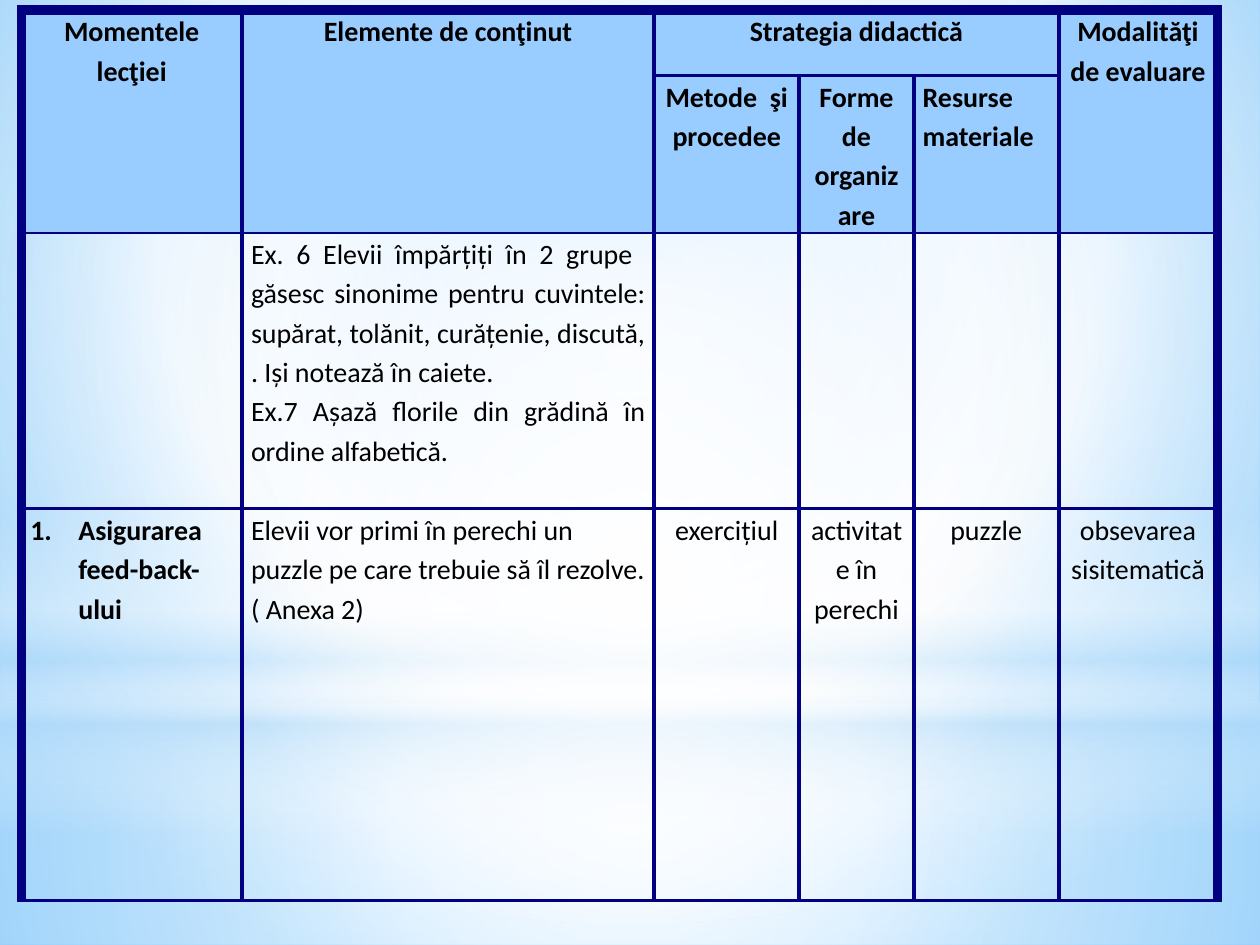
import pptx
import pptx.dml.color
import pptx.enum.shapes
import pptx.enum.text
import pptx.oxml
import pptx.oxml.ns
import pptx.util

Cm = pptx.util.Cm
Pt = pptx.util.Pt
RGBColor = pptx.dml.color.RGBColor
SHAPES = pptx.enum.shapes.MSO_SHAPE
ALIGN = pptx.enum.text.PP_ALIGN
qn = pptx.oxml.ns.qn
NAMESPACE = pptx.oxml.ns.nsdecls("a")

WHITE = RGBColor(0xFF, 0xFF, 0xFF)
BLACK = RGBColor(0, 0, 0)
NAVY = RGBColor(0, 0, 0x80)
HEADER_BLUE = RGBColor(0x99, 0xCC, 0xFF)
MIST = RGBColor(0xB4, 0xDC, 0xFA)
SKY = RGBColor(0x9E, 0xD5, 0xFF)
DEEP_SKY = RGBColor(0x5B, 0xB9, 0xFF)

LINEAR = '<a:lin ang="5400000" scaled="0"/>'
CENTRED = (50, 50, 50, 50)


def set_gradient(properties, stops, focus):
    """Replace a solid fill; stops are (position, colour, opacity) in percent.

    focus holds the left, top, right and bottom insets of a circular gradient,
    or None for a vertical linear one.
    """
    stop_xml = "".join(
        f'<a:gs pos="{position * 1000}"><a:srgbClr val="{color}">'
        f'<a:alpha val="{opacity * 1000}"/></a:srgbClr></a:gs>'
        for position, color, opacity in stops)
    direction = LINEAR
    if focus:
        insets = " ".join(f'{side}="{inset * 1000}"' for side, inset in zip("ltrb", focus))
        direction = f'<a:path path="circle"><a:fillToRect {insets}/></a:path>'
    gradient = pptx.oxml.parse_xml(
        f'<a:gradFill {NAMESPACE} rotWithShape="1"><a:gsLst>{stop_xml}</a:gsLst>{direction}</a:gradFill>')
    properties.replace(properties.find(qn("a:solidFill")), gradient)


def set_borders(cell, widths):
    """Draw the left, right, top and bottom borders, widths in points."""
    properties = cell._tc.get_or_add_tcPr()
    for index, (side, width) in enumerate(zip("LRTB", widths)):
        properties.insert(index, pptx.oxml.parse_xml(
            f'<a:ln{side} {NAMESPACE} w="{Pt(width)}"><a:solidFill>'
            f'<a:srgbClr val="{NAVY}"/></a:solidFill></a:ln{side}>'))


presentation = pptx.Presentation()
presentation.slide_width = Cm(25.4)
presentation.slide_height = Cm(19.05)
slide = presentation.slides.add_slide(presentation.slide_layouts[6])

# Background and soft light bands
slide.background.fill.solid()
set_gradient(slide._element.find(".//" + qn("p:bgPr")),
             [(0, SKY, 100), (60, WHITE, 100), (100, DEEP_SKY, 100)], (20, 10, 20, 60))
glows = [
    (SHAPES.RECTANGLE, 14.17, 4.88, CENTRED,
     [(0, WHITE, 91), (37, WHITE, 76), (100, MIST, 79)]),
    (SHAPES.RECTANGLE, 0, 14.17, CENTRED,
     [(0, WHITE, 89), (48, WHITE, 62), (100, MIST, 79)]),
    (SHAPES.RECTANGLE, 10.46, 6.35, None,
     [(0, WHITE, 0), (29, WHITE, 30), (45, MIST, 40),
      (55, WHITE, 26), (65, MIST, 60), (100, WHITE, 0)]),
    (SHAPES.OVAL, 4.45, 14.17, CENTRED, [(0, WHITE, 100), (56, WHITE, 0)]),
]
for preset, top, height, focus, stops in glows:
    shape = slide.shapes.add_shape(preset, 0, Cm(top), presentation.slide_width, Cm(height))
    shape.shadow.inherit = False
    shape.line.fill.background()
    shape.fill.solid()
    set_gradient(shape._element.spPr, stops, focus)

# Lesson plan table
column_widths = [4.45, 8.31, 2.92, 2.31, 2.92, 3.2]
row_heights = [1.32, 3.15, 5.56, 7.9]
row_count, column_count = len(row_heights), len(column_widths)
table = slide.shapes.add_table(
    row_count, column_count, Cm(0.43), Cm(0.2),
    Cm(sum(column_widths)), Cm(sum(row_heights))).table
table.first_row = False
table.horz_banding = False
for column, width in zip(table.columns, column_widths):
    column.width = Cm(width)
for row, height in zip(table.rows, row_heights):
    row.height = Cm(height)

for column in (0, 1, 5):
    table.cell(0, column).merge(table.cell(1, column))
table.cell(0, 2).merge(table.cell(0, 4))

for row in range(row_count):
    for column in range(column_count):
        cell = table.cell(row, column)
        cell.margin_left = cell.margin_right = Cm(0.18)
        cell.margin_top = cell.margin_bottom = 0
        if row < 2:
            cell.fill.solid()
            cell.fill.fore_color.rgb = HEADER_BLUE
        else:
            cell.fill.background()
        set_borders(cell, (6 if column == 0 else 2.5,
                           6 if column == column_count - 1 else 2.5,
                           6 if row == 0 else 1.5,
                           1.5))

# Row, column, alignment, space after, text
entries = [
    (0, 0, ALIGN.CENTER, 10, "Momentele lecţiei"),
    (0, 1, ALIGN.CENTER, 10, "Elemente de conţinut"),
    (0, 2, ALIGN.CENTER, 10, "Strategia didactică"),
    (0, 5, ALIGN.CENTER, 10, "Modalităţi de evaluare"),
    (1, 2, ALIGN.CENTER, 10, "Metode  şi procedee"),
    (1, 3, ALIGN.CENTER, 10, "Forme de organizare"),
    (1, 4, ALIGN.LEFT, 10, "Resurse materiale"),
    (2, 1, ALIGN.JUSTIFY, 0,
     "Ex. 6 Elevii împărțiți în 2 grupe  găsesc sinonime pentru cuvintele: "
     "supărat, tolănit, curățenie, discută, . Iși notează în caiete.\n"
     "Ex.7 Așază florile din grădină în ordine alfabetică."),
    (3, 0, ALIGN.JUSTIFY, 0, "Asigurarea feed-back-ului"),
    (3, 1, ALIGN.LEFT, 10,
     "Elevii vor primi în perechi un puzzle pe care trebuie să îl rezolve. ( Anexa 2)"),
    (3, 2, ALIGN.CENTER, 10, "exercițiul"),
    (3, 3, ALIGN.CENTER, 10, "activitate în perechi"),
    (3, 4, ALIGN.CENTER, 10, "puzzle"),
    (3, 5, ALIGN.CENTER, 10, "obsevarea sisitematică"),
]
for row, column, alignment, space_after, text in entries:
    text_frame = table.cell(row, column).text_frame
    text_frame.text = text
    for paragraph in text_frame.paragraphs:
        paragraph.alignment = alignment
        paragraph.line_spacing = 1.15
        paragraph.space_after = Pt(space_after)
        for run in paragraph.runs:
            run.font.name = "Calibri"
            run.font.size = Pt(16)
            run.font.bold = row < 2 or column == 0
            run.font.color.rgb = BLACK

# Numbered lesson moment
numbered = table.cell(3, 0).text_frame.paragraphs[0]._p.get_or_add_pPr()
numbered.set("marL", str(Cm(0.97)))
numbered.set("indent", str(-Cm(0.97)))
numbered.append(pptx.oxml.parse_xml(f'<a:buFont {NAMESPACE} typeface="+mj-lt"/>'))
numbered.append(pptx.oxml.parse_xml(f'<a:buAutoNum {NAMESPACE} type="arabicPeriod"/>'))

presentation.save("out.pptx")
